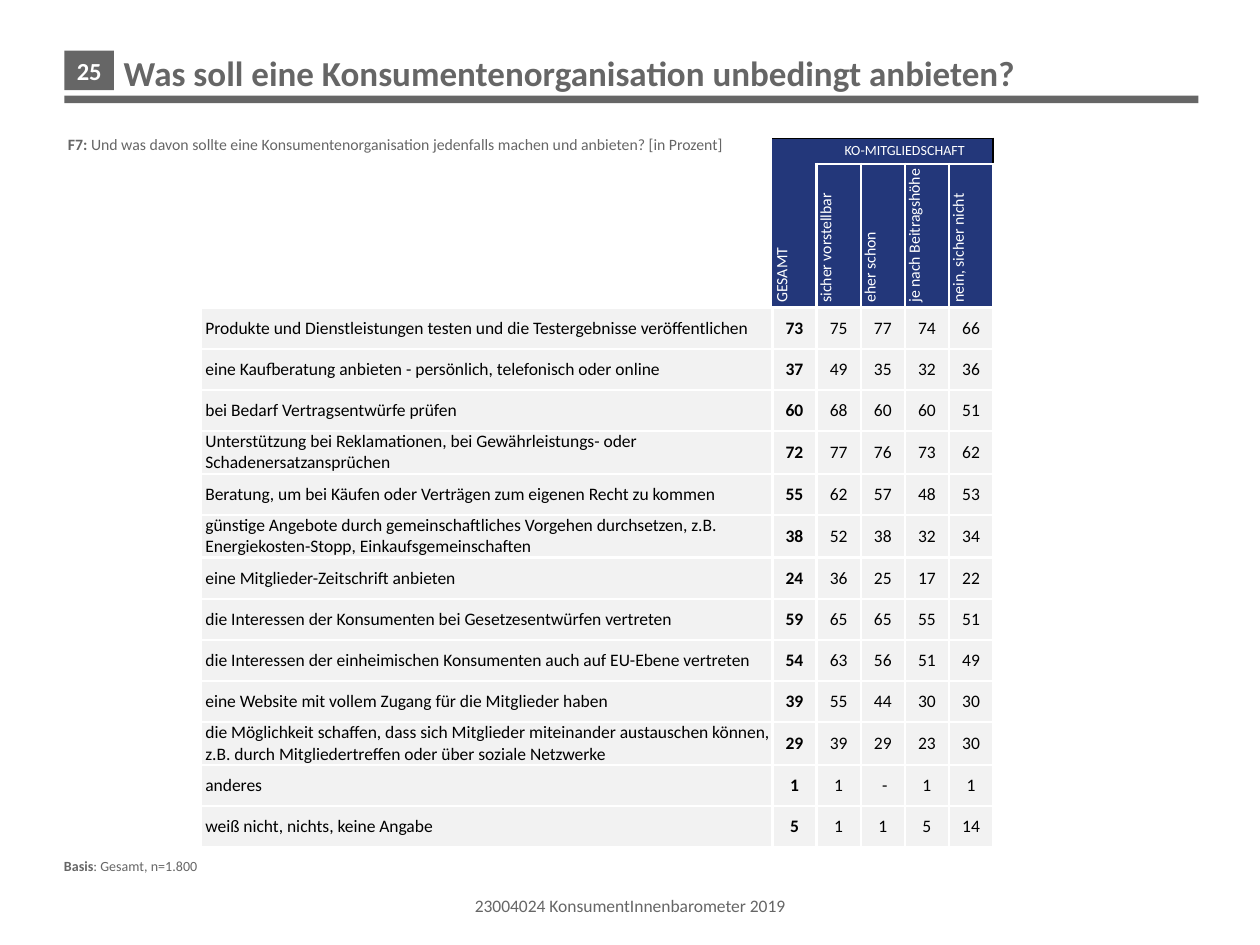
"""Build the survey slide on what a consumer organisation should offer."""
from dataclasses import dataclass

from lxml.etree import SubElement
from pptx import Presentation
from pptx.dml.color import RGBColor as Rgb
from pptx.enum.shapes import MSO_SHAPE as Shape
from pptx.enum.text import MSO_ANCHOR as Anchor, MSO_AUTO_SIZE as AutoSize, PP_ALIGN as Align
from pptx.oxml.ns import qn
from pptx.util import Cm, Pt

COLORS = {"grey": "666666", "navy": "23377A", "light": "F2F2F2", "white": "FFFFFF", "black": "000000"}
NO_MARGINS = dict.fromkeys(("margin_left", "margin_right", "margin_top", "margin_bottom"), 0)
WHITE_SIDES = dict.fromkeys("LRTB", ("white", 1.5))
LABEL_WIDTH, VALUE_WIDTH = 11.53, 0.89
HEADER_HEIGHTS = [0.51, 2.9]
ROW_HEIGHT, TALL_ROW_HEIGHT = 0.83, 0.86
MEMBERSHIP = ["sicher vorstellbar", "eher schon", "je nach Beitragshöhe", "nein, sicher nicht"]


@dataclass
class Span:
    text: str
    size: float
    color: str = "grey"
    bold: bool = False


@dataclass
class Place:
    left: float
    top: float
    width: float
    height: float

    def lengths(self) -> list:
        return [Cm(value) for value in (self.left, self.top, self.width, self.height)]


@dataclass
class Answer:
    label: str
    values: str
    tall: bool = False


ANSWERS = [
    Answer("Produkte und Dienstleistungen testen und die Testergebnisse veröffentlichen", "73|75|77|74|66"),
    Answer("eine Kaufberatung anbieten - persönlich, telefonisch oder online", "37|49|35|32|36"),
    Answer("bei Bedarf Vertragsentwürfe prüfen", "60|68|60|60|51"),
    Answer("Unterstützung bei Reklamationen, bei Gewährleistungs- oder Schadenersatzansprüchen",
           "72|77|76|73|62", True),
    Answer("Beratung, um bei Käufen oder Verträgen zum eigenen Recht zu kommen", "55|62|57|48|53"),
    Answer("günstige Angebote durch gemeinschaftliches Vorgehen durchsetzen, z.B. "
           "Energiekosten-Stopp, Einkaufsgemeinschaften", "38|52|38|32|34", True),
    Answer("eine Mitglieder-Zeitschrift anbieten", "24|36|25|17|22"),
    Answer("die Interessen der Konsumenten bei Gesetzesentwürfen vertreten", "59|65|65|55|51"),
    Answer("die Interessen der einheimischen Konsumenten auch auf EU-Ebene vertreten", "54|63|56|51|49"),
    Answer("eine Website mit vollem Zugang für die Mitglieder haben", "39|55|44|30|30"),
    Answer("die Möglichkeit schaffen, dass sich Mitglieder miteinander austauschen können, "
           "z.B. durch Mitgliedertreffen oder über soziale Netzwerke", "29|39|29|23|30", True),
    Answer("anderes", "1|1| -|1|1"),
    Answer("weiß nicht, nichts, keine Angabe", "5|1|1|5|14"),
]


def rgb(name: str) -> Rgb:
    return Rgb.from_string(COLORS[name])


def set_all(target, values: dict) -> None:
    for name, value in values.items():
        setattr(target, name, value)


def write(para, spans: list[Span], align=Align.LEFT) -> None:
    para.alignment = align
    for span in spans:
        run = para.add_run()
        run.text = span.text
        set_all(run.font, {"name": "Calibri", "size": Pt(span.size), "bold": span.bold})
        run.font.color.rgb = rgb(span.color)


def add_text(page, place: Place, spans: list[Span], spacing: float = 1.0) -> None:
    frame = page.shapes.add_textbox(*place.lengths()).text_frame
    frame.word_wrap = True
    frame.paragraphs[0].line_spacing = spacing
    write(frame.paragraphs[0], spans)


def add_block(page, place: Place, fill: str | None, spans: list[Span], kind=Shape.RECTANGLE) -> None:
    box = page.shapes.add_shape(kind, *place.lengths())
    box.shadow.inherit = False
    box.line.fill.background()
    if fill:
        box.fill.solid()
        box.fill.fore_color.rgb = rgb(fill)
    else:
        box.fill.background()
    set_all(box.text_frame, {"word_wrap": False, "vertical_anchor": Anchor.MIDDLE})
    write(box.text_frame.paragraphs[0], spans, Align.CENTER)


def style_cell(cell, fill: str | None, sides: dict) -> None:
    set_all(cell, NO_MARGINS | {"vertical_anchor": Anchor.MIDDLE})
    properties = cell._tc.get_or_add_tcPr()
    for side in "LRTB":
        color, width = sides.get(side, (None, 0))
        line = SubElement(properties, qn(f"a:ln{side}"), w=str(Pt(width)))
        if color:
            SubElement(SubElement(line, qn("a:solidFill")), qn("a:srgbClr"), val=COLORS[color])
        else:
            SubElement(line, qn("a:noFill"))
    if fill:
        cell.fill.solid()
        cell.fill.fore_color.rgb = rgb(fill)
    else:
        cell.fill.background()


def write_cell(cell, span: Span, centered: bool = False, upright: bool = False) -> None:
    para = cell.text_frame.paragraphs[0]
    write(para, [span], Align.CENTER if centered else Align.LEFT)
    if not centered:
        para._p.get_or_add_pPr().set("marL", str(Cm(0.1)))
    if upright:
        cell._tc.get_or_add_tcPr().set("vert", "vert270")


def fill_header(table) -> None:
    top, bottom = {"T": ("black", 1)}, {"B": ("white", 1.5)}
    style_cell(table.cell(0, 0), None, {})
    style_cell(table.cell(1, 0), None, bottom)
    for row in range(2):
        style_cell(table.cell(row, 1), "navy", top | bottom)
    for column, text in enumerate(MEMBERSHIP, 2):
        style_cell(table.cell(0, column), "navy", top | bottom | {"R": ("black", 1)})
        style_cell(table.cell(1, column), "navy", WHITE_SIDES)
        write_cell(table.cell(1, column), Span(text, 9, "white"), upright=True)
    table.cell(0, 1).merge(table.cell(1, 1))
    table.cell(0, 2).merge(table.cell(0, 5))
    write_cell(table.cell(0, 1), Span("GESAMT", 9, "white"), upright=True)
    write_cell(table.cell(0, 2), Span("KO-MITGLIEDSCHAFT", 8, "white"), centered=True)
    for cell in table.iter_cells():
        if cell._tc.row_idx < 2 and not cell.text:
            SubElement(cell.text_frame.paragraphs[0]._p, qn("a:endParaRPr"), sz="800")


def add_answer_table(page) -> None:
    heights = HEADER_HEIGHTS + [TALL_ROW_HEIGHT if answer.tall else ROW_HEIGHT for answer in ANSWERS]
    widths = [LABEL_WIDTH] + [VALUE_WIDTH] * (len(MEMBERSHIP) + 1)
    place = Place(4.04, 2.79, sum(widths), sum(heights))
    table = page.shapes.add_table(len(heights), len(widths), *place.lengths()).table
    set_all(table, {"first_row": False, "horz_banding": False})
    for column, width in zip(table.columns, widths):
        column.width = Cm(width)
    for row, height in zip(table.rows, heights):
        row.height = Cm(height)
    fill_header(table)
    for row, answer in enumerate(ANSWERS, len(HEADER_HEIGHTS)):
        for column, text in enumerate([answer.label, *answer.values.split("|")]):
            cell = table.cell(row, column)
            style_cell(cell, "light", WHITE_SIDES)
            write_cell(cell, Span(text, 10, "black", column == 1), centered=column > 0)


def add_title(page, place: Place, span: Span) -> None:
    title = page.shapes.title
    set_all(title, dict(zip(("left", "top", "width", "height"), place.lengths())))
    set_all(title.text_frame, {"vertical_anchor": Anchor.TOP, "auto_size": AutoSize.NONE, "word_wrap": True})
    write(title.text_frame.paragraphs[0], [span])


def main() -> None:
    deck = Presentation()
    set_all(deck, {"slide_width": Cm(25.4), "slide_height": Cm(19.05)})
    page = deck.slides.add_slide(deck.slide_layouts[5])
    add_block(page, Place(1.3, 1.02, 1, 0.8), "grey", [Span("25", 14, "white", True)])
    add_block(page, Place(1.32, 17.8, 22.76, 0.92), None,
              [Span("23004024 KonsumentInnenbarometer 2019", 10)], Shape.ROUNDED_RECTANGLE)
    add_block(page, Place(1.3, 1.93, 22.86, 0.15), "grey", [])
    add_title(page, Place(2.24, 0.91, 22.02, 1.2),
              Span("Was soll eine Konsumentenorganisation unbedingt anbieten?", 20, bold=True))
    add_text(page, Place(1.12, 2.51, 22.9, 0.56), [
        Span("F7: ", 9, bold=True),
        Span("Und was davon sollte eine Konsumentenorganisation jedenfalls machen und anbieten? [in Prozent]", 9),
    ], 1.2)
    add_text(page, Place(1.04, 17.17, 22.02, 0.58), [Span("Basis", 8, bold=True), Span(": Gesamt, n=1.800", 8)])
    add_answer_table(page)
    deck.save("out.pptx")


if __name__ == "__main__":
    main()
